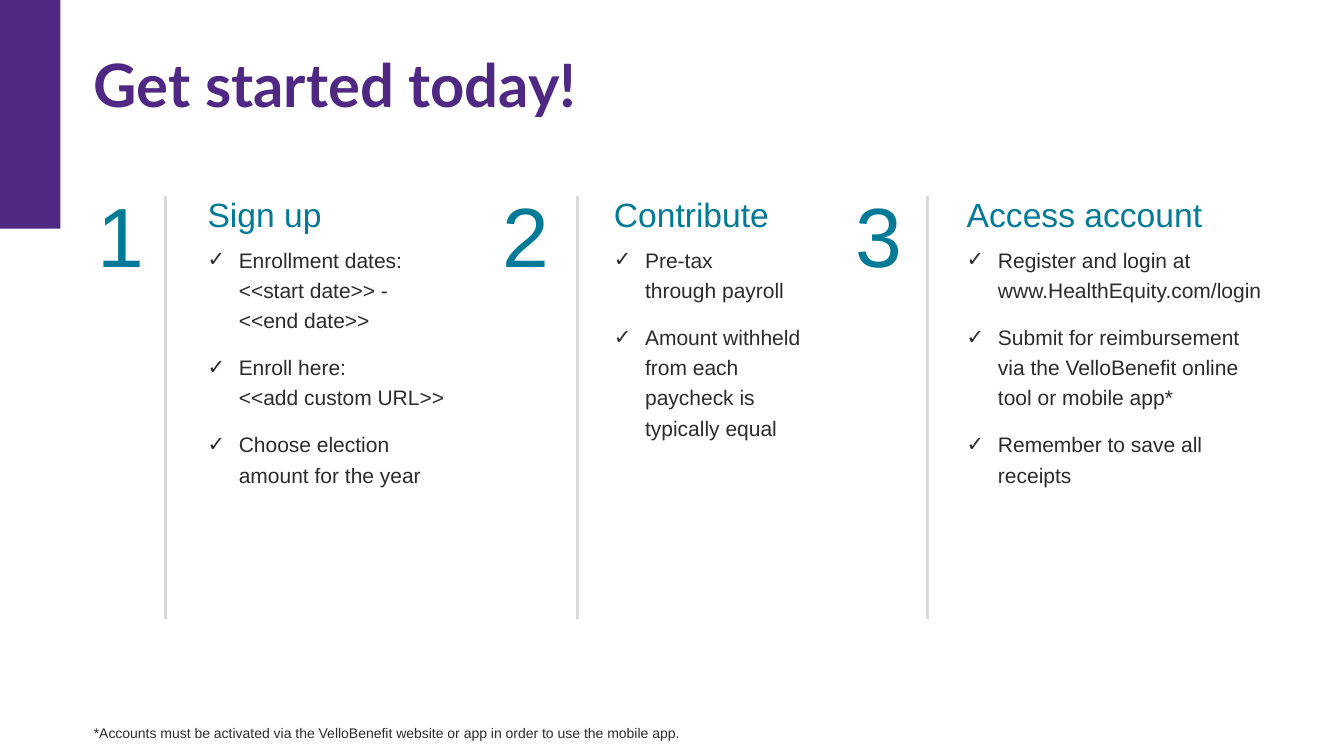
from dataclasses import dataclass

from lxml.etree import SubElement
from pptx import Presentation
from pptx.dml.color import RGBColor
from pptx.enum.shapes import MSO_CONNECTOR, MSO_SHAPE
from pptx.enum.text import MSO_ANCHOR, PP_ALIGN
from pptx.oxml.ns import qn
from pptx.slide import Slide
from pptx.text.text import TextFrame, _Paragraph
from pptx.util import Inches, Pt


@dataclass(frozen=True)
class Theme:
    purple: RGBColor = RGBColor(0x4F, 0x28, 0x83)
    teal: RGBColor = RGBColor(0x00, 0x7A, 0x96)
    ink: RGBColor = RGBColor(0x2A, 0x2C, 0x2C)
    rule: RGBColor = RGBColor(0xD9, 0xD9, 0xD9)
    title_font: str = "Lato"
    body_font: str = "Arial"
    title_size: float = 42.7
    number_size: float = 60
    heading_size: float = 24
    body_size: float = 15
    footnote_size: float = 10


@dataclass(frozen=True)
class Step:
    number_left: float
    rule_x: float
    text_left: float
    text_width: float
    heading: str
    actions: tuple[str, ...]


THEME = Theme()

# A vertical tab is a line break inside a paragraph
STEPS = (
    Step(0.71, 1.64, 1.96, 2.62, "Sign up", (
        "Enrollment dates: <<start date>> -\v<<end date>>",
        "Enroll here:\v<<add custom URL>>",
        "Choose election amount for the year",
    )),
    Step(4.73, 5.73, 5.99, 2.26, "Contribute", (
        "Pre-tax\vthrough payroll",
        "Amount withheld from each paycheck is typically equal",
    )),
    Step(8.23, 9.2, 9.49, 3.14, "Access account", (
        "Register and login at www.HealthEquity.com/login",
        "Submit for reimbursement via\u00a0the VelloBenefit online tool or mobile app*",
        "Remember to save all receipts",
    )),
)


def add_frame(slide: Slide, left: float, top: float, width: float,
              height: float, **frame_format: object) -> TextFrame:
    frame = slide.shapes.add_textbox(
        Inches(left), Inches(top), Inches(width), Inches(height)).text_frame
    frame_format = {"word_wrap": True, "vertical_anchor": MSO_ANCHOR.TOP} | frame_format
    for name, value in frame_format.items():
        setattr(frame, name, value)
    return frame


def write(paragraph: _Paragraph, text: str, size: float, color: RGBColor,
          font: str = THEME.body_font, bold: bool = False,
          **paragraph_format: object) -> None:
    paragraph.text = text
    for name, value in paragraph_format.items():
        setattr(paragraph, name, value)
    for run in paragraph.runs:
        for name, value in {"size": Pt(size), "name": font, "bold": bold}.items():
            setattr(run.font, name, value)
        run.font.color.rgb = color


def add_check_bullet(paragraph: _Paragraph) -> None:
    properties = paragraph._p.get_or_add_pPr()
    properties.set("marL", str(Inches(0.31)))
    properties.set("indent", str(Inches(-0.31)))
    SubElement(properties, qn("a:buFont"), typeface=THEME.body_font)
    SubElement(properties, qn("a:buChar"), char="✓")


def add_step(slide: Slide, number: int, step: Step) -> None:
    # Large number
    number_frame = add_frame(slide, step.number_left, 1.68, 0.97, 0.37,
                             margin_top=Inches(0.14))
    write(number_frame.paragraphs[0], str(number), THEME.number_size, THEME.teal,
          alignment=PP_ALIGN.CENTER)

    # Heading and checklist
    details = add_frame(slide, step.text_left, 1.83, step.text_width, 3.52)
    write(details.paragraphs[0], step.heading, THEME.heading_size, THEME.teal,
          line_spacing=1.1, space_after=Pt(6))
    for action in step.actions:
        item = details.add_paragraph()
        add_check_bullet(item)
        write(item, action, THEME.body_size, THEME.ink,
              line_spacing=1.2, space_after=Pt(12))

    # Vertical rule
    rule = slide.shapes.add_connector(
        MSO_CONNECTOR.STRAIGHT, Inches(step.rule_x), Inches(1.94),
        Inches(step.rule_x), Inches(6.14))
    rule.line.color.rgb = THEME.rule
    rule.line.width = Pt(2)
    SubElement(rule._element.spPr, qn("a:effectLst"))


def main() -> None:
    presentation = Presentation()
    presentation.slide_width = Inches(13.33)
    presentation.slide_height = Inches(7.5)
    slide = presentation.slides.add_slide(presentation.slide_layouts[6])
    no_margins = dict.fromkeys(
        ("margin_left", "margin_top", "margin_right", "margin_bottom"), 0)

    # Corner band
    band = slide.shapes.add_shape(
        MSO_SHAPE.RECTANGLE, 0, 0, Inches(0.6), Inches(2.27))
    band.shadow.inherit = False
    band.fill.solid()
    band.fill.fore_color.rgb = THEME.purple
    band.line.fill.background()

    # Title
    title = add_frame(slide, 0.93, 0.4, 11.85, 0.73, **no_margins)
    write(title.paragraphs[0], "Get started today!", THEME.title_size,
          THEME.purple, THEME.title_font, bold=True, line_spacing=1.1)

    # Three steps
    for number, step in enumerate(STEPS, start=1):
        add_step(slide, number, step)

    # Footnote
    footnote = add_frame(slide, 0.93, 7.14, 11.75, 0.2, **no_margins)
    write(footnote.paragraphs[0],
          "*Accounts must be activated via the VelloBenefit website or app "
          "in order to use the mobile app.",
          THEME.footnote_size, THEME.ink, line_spacing=1.3)

    presentation.save("out.pptx")


if __name__ == "__main__":
    main()
